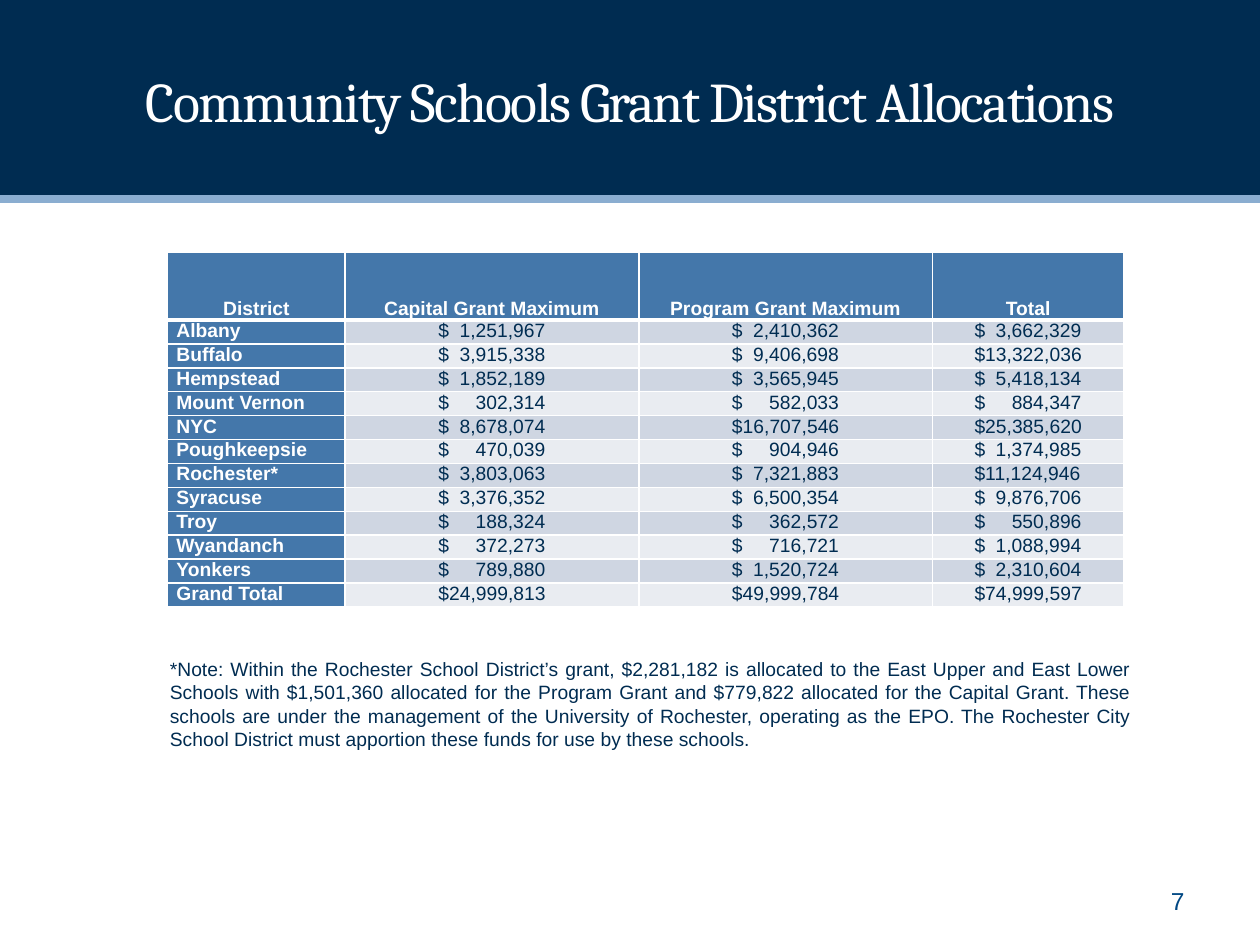
from lxml.etree import SubElement
from pptx import Presentation
from pptx.dml.color import RGBColor
from pptx.enum.shapes import MSO_CONNECTOR, MSO_SHAPE
from pptx.enum.text import MSO_ANCHOR, MSO_AUTO_SIZE, PP_ALIGN
from pptx.oxml.ns import qn
from pptx.util import Inches, Pt

TITLE = "Community Schools Grant District Allocations"
HEADINGS = ["District", "Capital Grant Maximum", "Program Grant Maximum", "Total"]
ALLOCATIONS = [
    ("Albany", 1251967, 2410362, 3662329),
    ("Buffalo", 3915338, 9406698, 13322036),
    ("Hempstead", 1852189, 3565945, 5418134),
    ("Mount Vernon", 302314, 582033, 884347),
    ("NYC", 8678074, 16707546, 25385620),
    ("Poughkeepsie", 470039, 904946, 1374985),
    ("Rochester*", 3803063, 7321883, 11124946),
    ("Syracuse", 3376352, 6500354, 9876706),
    ("Troy", 188324, 362572, 550896),
    ("Wyandanch", 372273, 716721, 1088994),
    ("Yonkers", 789880, 1520724, 2310604),
    ("Grand Total", 24999813, 49999784, 74999597),
]
NOTE = (
    "*Note: Within the Rochester School District’s grant, $2,281,182 is allocated to the "
    "East Upper and East Lower Schools with $1,501,360 allocated for the Program Grant and "
    "$779,822 allocated for the Capital Grant. These schools are under the management of the "
    "University of Rochester, operating as the EPO. The Rochester City School District must "
    "apportion these funds for use by these schools."
)
PAGE_NUMBER = "7"

NAVY, WHITE, BLUE = "002C51", "FFFFFF", "4477AA"
RULE, NUMBER_BLUE = "8AADD0", "004884"
BANDS = ["CFD6E2", "E9ECF1"]
WIDTH, HEIGHT, BAND_HEIGHT = 10, 7.5, 1.58
COLUMNS = [1.41, 2.33, 2.33, 1.52]
HEADER_HEIGHT, ROW_HEIGHT = 0.54, 0.19
CELL_INSET, AMOUNT_WIDTH = 0.07, 0.85
LONGEST_AMOUNT = max(len(f"{value:,}") for row in ALLOCATIONS for value in row[1:])


def color(value):
    return RGBColor.from_string(value)


def style(paragraph, size, value, align, bold=False, name="Arial"):
    paragraph.alignment = align
    font = paragraph.font
    font.name, font.size, font.bold = name, Pt(size), bold
    font.color.rgb = color(value)


def add_text(page, text, place, size, value, align, anchor=MSO_ANCHOR.TOP):
    box = page.shapes.add_textbox(*map(Inches, place))
    frame = box.text_frame
    frame.word_wrap = True
    frame.vertical_anchor = anchor
    frame.text = text
    style(frame.paragraphs[0], size, value, align)


def add_borders(cell, bottom):
    properties = cell._tc.get_or_add_tcPr()
    for index, (side, points) in enumerate([("L", 1), ("R", 1), ("T", 1), ("B", bottom)]):
        line = properties.makeelement(qn(f"a:ln{side}"), {"w": str(Pt(points))})
        fill = SubElement(line, qn("a:solidFill"))
        SubElement(fill, qn("a:srgbClr"), val=WHITE)
        properties.insert(index, line)


def add_amount(cell, value, column_width):
    amount = f"{value:,}"
    gap = "\t" if len(amount) < LONGEST_AMOUNT else ""
    cell.text = f"${gap}{amount}"
    cell.margin_left = Inches((column_width - AMOUNT_WIDTH) / 2)
    properties = cell.text_frame.paragraphs[0]._p.get_or_add_pPr()
    tabs = SubElement(properties, qn("a:tabLst"))
    SubElement(tabs, qn("a:tab"), pos=str(Inches(AMOUNT_WIDTH)), algn="r")


def add_allocations(page):
    rows = [HEADINGS, *ALLOCATIONS]
    height = HEADER_HEIGHT + ROW_HEIGHT * len(ALLOCATIONS)
    place = (1.33, 2, sum(COLUMNS), height)
    table = page.shapes.add_table(len(rows), len(COLUMNS), *map(Inches, place)).table
    table.first_col = True
    for column, width in zip(table.columns, COLUMNS):
        column.width = Inches(width)
    for r, row in enumerate(rows):
        header = r == 0
        table.rows[r].height = Inches(HEADER_HEIGHT if header else ROW_HEIGHT)
        for c, value in enumerate(row):
            cell = table.cell(r, c)
            label = header or c == 0
            cell.margin_left = cell.margin_right = Inches(CELL_INSET)
            cell.margin_top = cell.margin_bottom = 0
            cell.vertical_anchor = MSO_ANCHOR.BOTTOM if header else MSO_ANCHOR.TOP
            cell.fill.solid()
            cell.fill.fore_color.rgb = color(BLUE if label else BANDS[(r - 1) % 2])
            add_borders(cell, 3 if header else 1)
            if label:
                cell.text = value
            else:
                add_amount(cell, value, COLUMNS[c])
            align = PP_ALIGN.CENTER if header else PP_ALIGN.LEFT
            style(cell.text_frame.paragraphs[0], 11, WHITE if label else NAVY, align, label)


def add_heading(page):
    title = page.shapes.title
    title.left, title.top, title.width, title.height = map(Inches, (0.5, 0.17, 9, 1.25))
    frame = title.text_frame
    frame.text = TITLE
    frame.auto_size = MSO_AUTO_SIZE.NONE
    frame.vertical_anchor = MSO_ANCHOR.MIDDLE
    paragraph = frame.paragraphs[0]
    style(paragraph, 32, WHITE, PP_ALIGN.CENTER, name="Cambria")
    paragraph.runs[0].font._element.set("spc", "-100")

    band = page.shapes.add_shape(MSO_SHAPE.RECTANGLE, 0, 0, Inches(WIDTH), Inches(BAND_HEIGHT))
    band.shadow.inherit = False
    band.fill.solid()
    band.fill.fore_color.rgb = color(NAVY)
    band.line.fill.background()
    ends = map(Inches, (0, BAND_HEIGHT, WIDTH, BAND_HEIGHT))
    rule = page.shapes.add_connector(MSO_CONNECTOR.STRAIGHT, *ends)
    rule.line.color.rgb = color(RULE)
    rule.line.width = Pt(4.5)
    SubElement(rule.element.spPr, qn("a:effectLst"))
    for shape in (band, rule):
        title.element.addprevious(shape.element)


def main():
    deck = Presentation()
    deck.slide_width, deck.slide_height = Inches(WIDTH), Inches(HEIGHT)
    page = deck.slides.add_slide(deck.slide_layouts[5])
    add_heading(page)
    add_text(page, PAGE_NUMBER, (7.17, 6.95, 2.33, 0.4), 14, NUMBER_BLUE,
             PP_ALIGN.RIGHT, MSO_ANCHOR.MIDDLE)
    add_text(page, NOTE, (1.25, 5.17, 7.83, 0.84), 11, NAVY, PP_ALIGN.JUSTIFY)
    add_allocations(page)
    deck.save("out.pptx")


if __name__ == "__main__":
    main()
